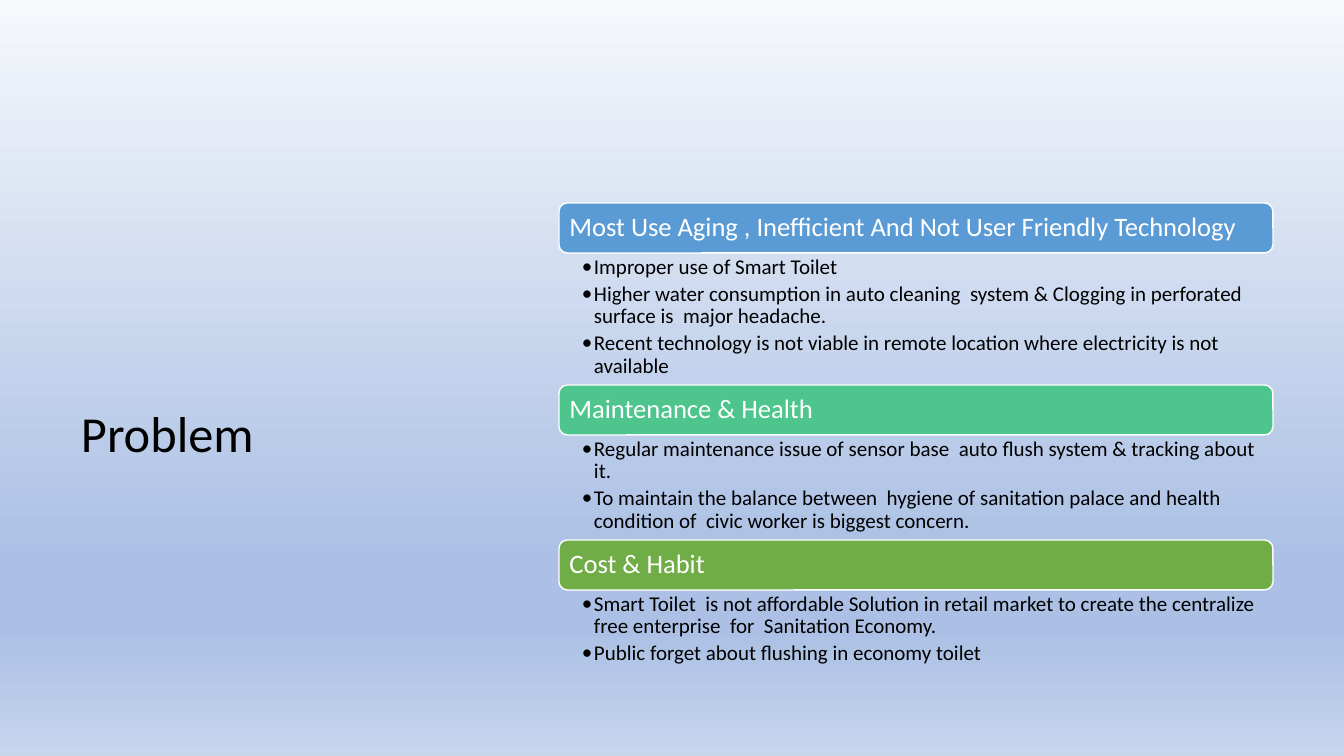
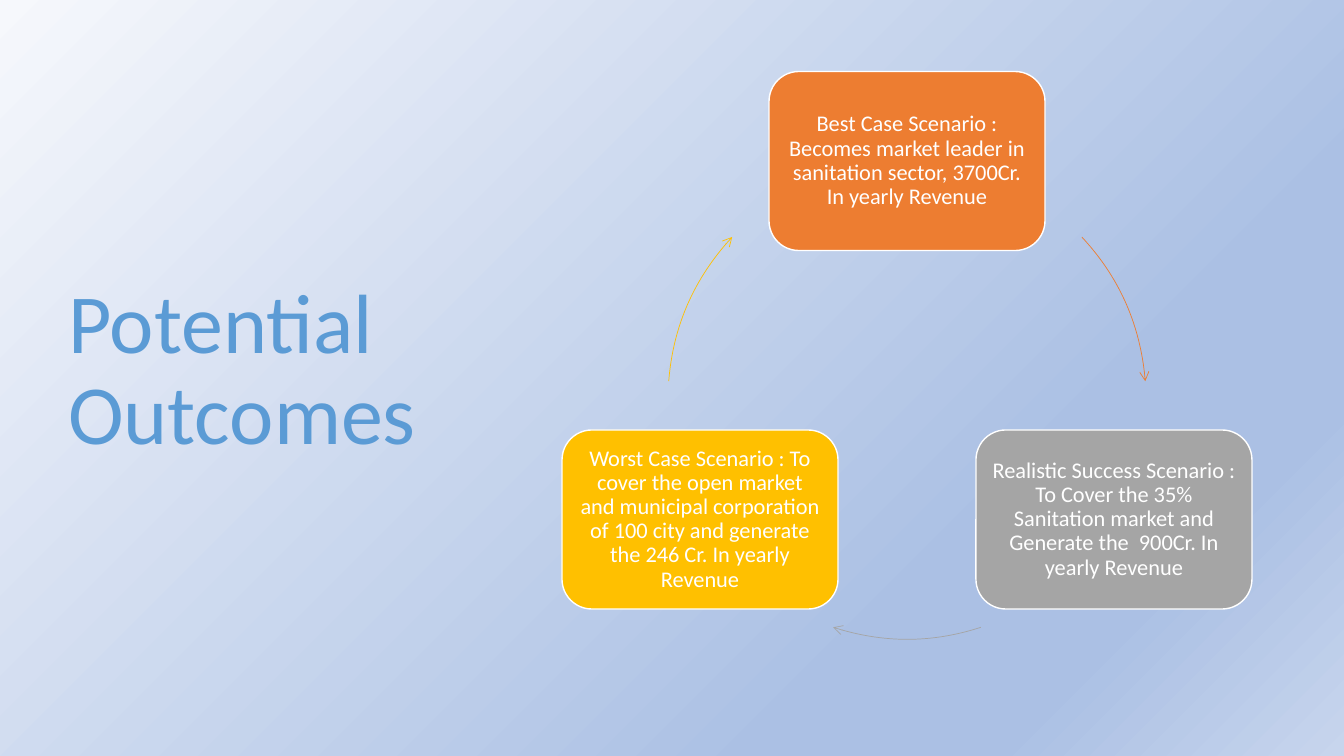
from dataclasses import dataclass
from math import cos, radians, sin, tan

from lxml.etree import SubElement
from pptx import Presentation
from pptx.dml.color import RGBColor
from pptx.enum.shapes import MSO_SHAPE as Shape
from pptx.enum.text import MSO_ANCHOR as Anchor, MSO_AUTO_SIZE as AutoSize, PP_ALIGN as Align
from pptx.oxml.ns import qn
from pptx.util import Pt

EMU_PER_PX = 12192000 / 1344
FONT = "Calibri"
COLORS = {
    "black": "000000", "white": "FFFFFF", "blue": "5B9BD5", "mint": "4DC58D",
    "green": "70AD47", "orange": "ED7D31", "gray": "A5A5A5", "gold": "FFC000",
    "sky_top": "F6F8FC", "sky_deep": "ABC0E4", "sky_end": "C7D5ED",
}


@dataclass(frozen=True)
class Section:
    heading: str
    color: str
    body_height: int
    points: tuple[str, ...]


@dataclass(frozen=True)
class Scenario:
    text: str
    color: str
    arrow_from: float  # degrees clockwise from three o'clock
    arrow_to: float


SECTIONS = (
    Section("Most Use Aging , Inefficient And Not User Friendly Technology", "blue", 132, (
        "Improper use of Smart Toilet",
        "Higher water consumption in auto cleaning  system & Clogging in perforated "
        "surface is  major headache.",
        "Recent technology is not viable in remote location where electricity is not available",
    )),
    Section("Maintenance & Health", "mint", 105, (
        "Regular maintenance issue of sensor base  auto flush system & tracking about it.",
        "To maintain the balance between  hygiene of sanitation palace and health "
        "condition of  civic worker is biggest concern.",
    )),
    Section("Cost & Habit", "green", 80, (
        "Smart Toilet  is not affordable Solution in retail market to create the "
        "centralize free enterprise  for  Sanitation Economy.",
        "Public forget about flushing in economy toilet",
    )),
)

SCENARIOS = (
    Scenario("Best Case Scenario : Becomes market leader in sanitation sector, "
             "3700Cr. In yearly Revenue", "orange", -43, -4.5),
    Scenario("Realistic Success Scenario : To Cover the 35% Sanitation market and "
             "Generate the  900Cr. In yearly Revenue", "gray", 72, 108),
    Scenario("Worst Case Scenario : To cover the open market and municipal corporation "
             "of 100 city and generate the 246 Cr. In yearly Revenue", "gold", 184.5, 223),
)


def px(length: float) -> int:
    return round(length * EMU_PER_PX)


def rgb(name: str) -> RGBColor:
    return RGBColor.from_string(COLORS[name])


def write(shape, *lines: str, size: int, color: str, align=Align.LEFT, anchor=Anchor.MIDDLE,
          insets=(10, 5, 10, 5), space_after: float = 0, bullet_indent: int = 0) -> None:
    """Fill a shape with one formatted paragraph per line."""
    frame = shape.text_frame
    frame.word_wrap = True
    frame.auto_size = AutoSize.NONE
    frame.vertical_anchor = anchor
    (frame.margin_left, frame.margin_top,
     frame.margin_right, frame.margin_bottom) = map(px, insets)
    for index, line in enumerate(lines):
        paragraph = frame.add_paragraph() if index else frame.paragraphs[0]
        paragraph.alignment = align
        paragraph.line_spacing = 0.9
        paragraph.space_after = Pt(space_after)
        run = paragraph.add_run()
        run.text = line
        run.font.name, run.font.size = FONT, Pt(size)
        run.font.color.rgb = rgb(color)
        if bullet_indent:
            properties = paragraph._p.get_or_add_pPr()
            properties.set("marL", str(px(bullet_indent)))
            properties.set("indent", str(-px(bullet_indent)))
            SubElement(properties, qn("a:buFont"), typeface=FONT)
            SubElement(properties, qn("a:buChar"), char="•")


def new_slide(deck, title: str, box: tuple, size: int, color: str, angle: int, deep_stop: int):
    """Add a title-only slide with the shared gradient background."""
    slide = deck.slides.add_slide(deck.slide_layouts[5])
    backdrop = slide.background.fill
    backdrop.gradient()
    backdrop.gradient_angle = 360 - angle
    stops = slide.element.find(".//" + qn("a:gsLst"))
    for stop in list(stops):
        stops.remove(stop)
    for position, name in ((0, "sky_top"), (deep_stop, "sky_deep"),
                           (83, "sky_deep"), (100, "sky_end")):
        stop = SubElement(stops, qn("a:gs"), pos=str(position * 1000))
        SubElement(stop, qn("a:srgbClr"), val=COLORS[name])
    heading = slide.shapes.title
    heading.left, heading.top, heading.width, heading.height = map(px, box)
    write(heading, title, size=size, color=color)
    return slide


def add_card(slide, left: float, top: float, width: int, height: int, color: str):
    card = slide.shapes.add_shape(Shape.ROUNDED_RECTANGLE, *map(px, (left, top, width, height)))
    card.shadow.inherit = False
    card.fill.solid()
    card.fill.fore_color.rgb = rgb(color)
    card.line.color.rgb = rgb("white")
    card.line.width = Pt(1)
    return card


def on_circle(center: tuple, radius: float, degrees: float) -> tuple[float, float]:
    angle = radians(degrees)
    return center[0] + radius * cos(angle), center[1] + radius * sin(angle)


def add_arc_arrow(slide, center: tuple, radius: int, scenario: Scenario) -> None:
    """Draw one Bézier arc in a frame that spans the whole circle."""
    start, end = scenario.arrow_from, scenario.arrow_to
    reach = 4 / 3 * tan(radians(end - start) / 4) * radius
    hub = (radius, radius)
    first, last = on_circle(hub, radius, start), on_circle(hub, radius, end)
    curve = (on_circle(first, reach, start + 90), on_circle(last, reach, end - 90), last)
    builder = slide.shapes.build_freeform(px(first[0]), px(first[1]))
    builder.add_line_segments([(px(x), px(y)) for x, y in curve], close=False)
    arrow = builder.convert_to_shape()
    arrow.left, arrow.top = px(center[0] - radius), px(center[1] - radius)
    arrow.width = arrow.height = px(2 * radius)

    outline = arrow.element.find(".//" + qn("a:path"))
    for step in list(outline):
        outline.remove(step)
    outline.set("w", str(arrow.width))
    outline.set("h", str(arrow.height))
    for tag, points in (("a:moveTo", (first,)), ("a:cubicBezTo", curve)):
        step = SubElement(outline, qn(tag))
        for x, y in points:
            SubElement(step, qn("a:pt"), x=str(px(x)), y=str(px(y)))

    arrow.shadow.inherit = False
    arrow.fill.background()
    arrow.line.color.rgb = rgb(scenario.color)
    arrow.line.width = Pt(0.5)
    SubElement(arrow.element.spPr.find(qn("a:ln")), qn("a:tailEnd"), type="arrow")


def build_problem(deck) -> None:
    slide = new_slide(deck, "Problem", (71, 187, 436, 498), 36, "black", 90, 74)
    left, top, width, bar_height = 559, 203, 714, 50
    for section in SECTIONS:
        bar = add_card(slide, left, top, width, bar_height, section.color)
        write(bar, section.heading, size=19, color="white", insets=(8, 6, 8, 6))
        top += bar_height
        body = slide.shapes.add_textbox(*map(px, (left, top, width, section.body_height)))
        write(body, *section.points, size=15, color="black", anchor=Anchor.TOP,
              insets=(23, 3, 15, 3), space_after=3, bullet_indent=12)
        top += section.body_height


def build_outcomes(deck) -> None:
    slide = new_slide(deck, "Potential Outcomes", (58, 68, 419, 607), 60, "blue", 45, 72)
    center, radius, width, height = (907, 400), 239, 276, 179
    for index, scenario in enumerate(SCENARIOS):
        # Cards sit evenly round the circle, starting at the top
        x, y = on_circle(center, radius, -90 + index * 360 / len(SCENARIOS))
        card = add_card(slide, x - width / 2, y - height / 2, width, height, scenario.color)
        write(card, scenario.text, size=16, color="white", align=Align.CENTER,
              insets=(7, 7, 7, 7))
        add_arc_arrow(slide, center, radius, scenario)


def main() -> None:
    deck = Presentation()
    deck.slide_width, deck.slide_height = px(1344), px(756)
    build_problem(deck)
    build_outcomes(deck)
    deck.save("out.pptx")


if __name__ == "__main__":
    main()
